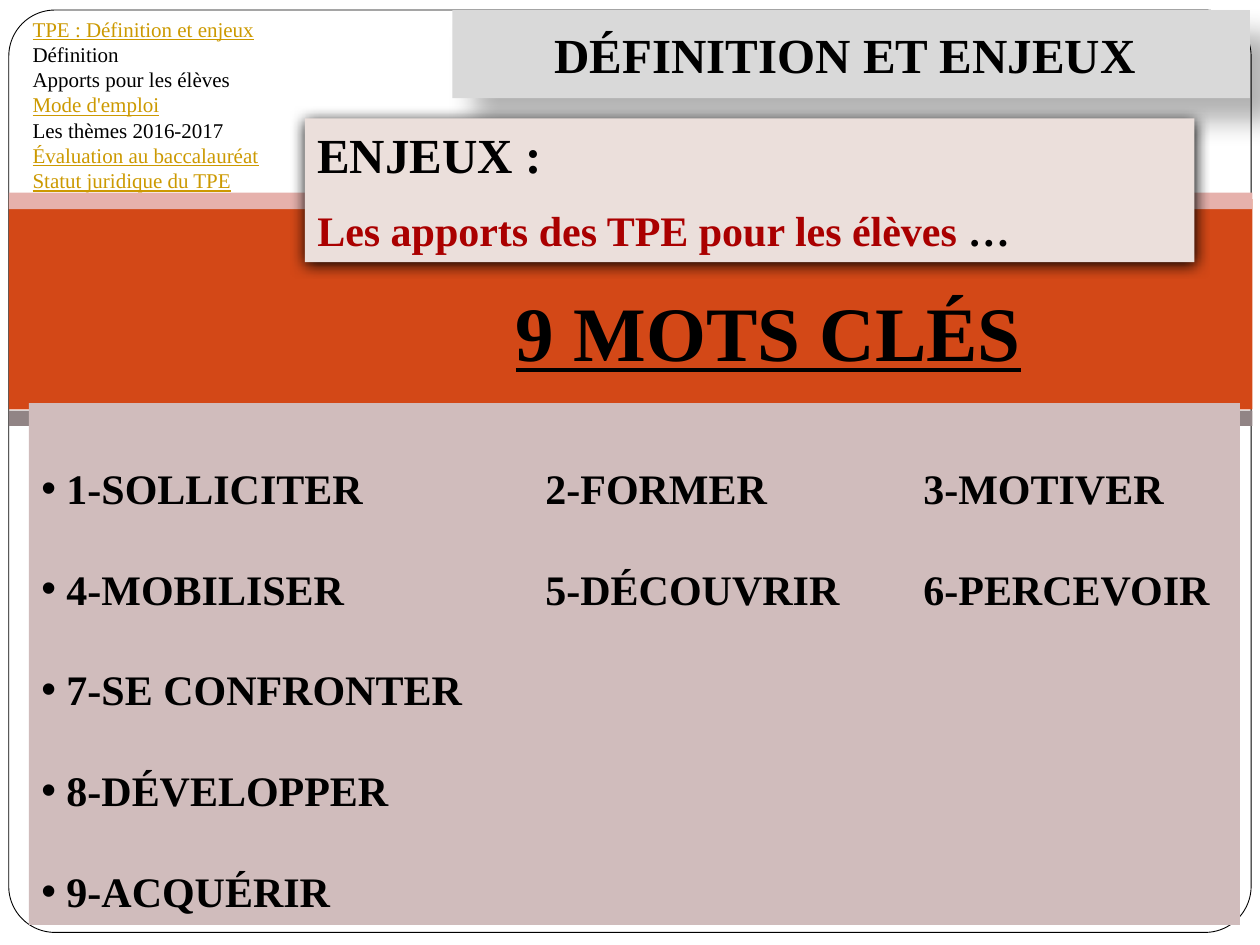
from dataclasses import dataclass

from lxml import etree
from pptx import Presentation
from pptx.dml.color import RGBColor
from pptx.enum.shapes import MSO_SHAPE
from pptx.enum.text import MSO_ANCHOR, PP_ALIGN
from pptx.oxml.ns import qn
from pptx.util import Inches, Pt

RECTANGLE = MSO_SHAPE.RECTANGLE
ROUNDED = MSO_SHAPE.ROUNDED_RECTANGLE
TOP, MIDDLE = MSO_ANCHOR.TOP, MSO_ANCHOR.MIDDLE
LEFT, CENTER = PP_ALIGN.LEFT, PP_ALIGN.CENTER


@dataclass(frozen=True)
class Theme:
    font: str = "Times New Roman"
    black: str = "000000"
    white: str = "FFFFFF"
    orange: str = "D34817"
    pink: str = "E6B1AC"
    taupe: str = "918485"
    title_fill: str = "D9D9D9"
    stakes_fill: str = "EBDFDB"
    keywords_fill: str = "D0BCBC"
    link: str = "CC9900"
    accent: str = "AA0000"
    menu_size: int = 12
    body_size: int = 24
    heading_size: int = 28
    banner_size: int = 44


class SlideBuilder:
    def __init__(self, slide, theme):
        self.slide = slide
        self.theme = theme

    def panel(self, left, top, width, height, fill, kind=RECTANGLE):
        shape = self.slide.shapes.add_shape(
            kind, Inches(left), Inches(top), Inches(width), Inches(height))
        shape.shadow.inherit = False
        shape.fill.solid()
        shape.fill.fore_color.rgb = RGBColor.from_string(fill)
        shape.line.fill.background()
        return shape

    def text_box(self, left, top, width, height):
        return self.slide.shapes.add_textbox(
            Inches(left), Inches(top), Inches(width), Inches(height))

    def cast_shadow(self, shape, opacity, blur, distance, angle):
        """Opacity in percent, blur and distance in points, angle in degrees."""
        effects = shape._element.spPr.find(qn("a:effectLst"))
        shadow = etree.SubElement(
            effects, qn("a:outerShdw"), blurRad=str(Pt(blur)),
            dist=str(Pt(distance)), dir=str(angle * 60000),
            algn="tl", rotWithShape="0")
        color = etree.SubElement(shadow, qn("a:srgbClr"), val=self.theme.black)
        etree.SubElement(color, qn("a:alpha"), val=str(opacity * 1000))

    def fill_text(self, shape, lines, align=LEFT, anchor=TOP):
        """Fill a shape with one paragraph per line, each a list of runs."""
        frame = shape.text_frame
        frame.word_wrap = True
        frame.vertical_anchor = anchor
        for index, runs in enumerate(lines):
            paragraph = frame.add_paragraph() if index else frame.paragraphs[0]
            paragraph.alignment = align
            for run in runs:
                self.add_run(paragraph, *run)
        return frame.paragraphs

    def add_run(self, paragraph, text, size, color, bold=True, underline=False):
        run = paragraph.add_run()
        run.text = text
        font = run.font
        font.name = self.theme.font
        font.size = Pt(size)
        font.bold = bold
        font.underline = underline
        font.color.rgb = RGBColor.from_string(color)

    def bullet(self, paragraph, tab_stops):
        properties = paragraph._p.get_or_add_pPr()
        properties.set("marL", "0")
        properties.set("indent", "0")
        etree.SubElement(properties, qn("a:buFont"), typeface="Arial")
        etree.SubElement(properties, qn("a:buChar"), char="•")
        tabs = etree.SubElement(properties, qn("a:tabLst"))
        for stop in tab_stops:
            etree.SubElement(tabs, qn("a:tab"), pos=str(Inches(stop)), algn="l")


MENU = [
    ("TPE : Définition et enjeux", True),
    ("Définition", False),
    ("Apports pour les élèves", False),
    ("Mode d'emploi", True),
    ("Les thèmes 2016-2017", False),
    ("Évaluation au baccalauréat", True),
    ("Statut juridique du TPE", True),
]
KEYWORD_ROWS = [
    ["1-SOLLICITER", "2-FORMER", "3-MOTIVER"],
    ["4-MOBILISER", "5-DÉCOUVRIR", "6-PERCEVOIR"],
    ["7-SE CONFRONTER"],
    ["8-DÉVELOPPER"],
    ["9-ACQUÉRIR"],
]
KEYWORD_TABS = (4, 7)


def main():
    presentation = Presentation()
    presentation.slide_width = Inches(10)
    presentation.slide_height = Inches(7.5)
    slide = presentation.slides.add_slide(presentation.slide_layouts[6])
    theme = Theme()
    builder = SlideBuilder(slide, theme)

    border = builder.panel(0.07, 0.08, 9.86, 7.32, theme.white, ROUNDED)
    border.adjustments[0] = 0.05
    border.line.color.rgb = RGBColor.from_string(theme.black)
    border.line.width = Pt(0.5)
    for top, height, color in [(1.58, 1.67, theme.orange),
                               (1.53, 0.13, theme.pink),
                               (3.26, 0.12, theme.taupe)]:
        builder.panel(0.07, top, 9.87, height, color)

    title = builder.panel(3.59, 0.08, 6.33, 0.7, theme.title_fill)
    builder.cast_shadow(title, 30, 15, 18, 45)
    builder.fill_text(
        title, [[("DÉFINITION ET ENJEUX ", theme.heading_size, theme.black)]],
        CENTER, MIDDLE)

    stakes = builder.panel(2.42, 0.94, 7.06, 1.14, theme.stakes_fill)
    builder.cast_shadow(stakes, 100, 8.5, 1, 90)
    stakes_heading, _ = builder.fill_text(stakes, [
        [("ENJEUX :", theme.heading_size, theme.black)],
        [("Les apports des TPE pour les élèves ", theme.body_size, theme.accent),
         ("…", theme.body_size, theme.black)],
    ])
    stakes_heading.space_after = Pt(12)

    keywords = builder.panel(0.23, 3.2, 9.61, 4.14, theme.keywords_fill)
    keyword_lines = [[(" " + "\t".join(row), theme.body_size, theme.black)]
                     for row in KEYWORD_ROWS]
    for paragraph in builder.fill_text(keywords, keyword_lines, anchor=MIDDLE):
        paragraph.line_spacing = 2.0
        builder.bullet(paragraph, KEYWORD_TABS)

    menu = builder.text_box(0.16, 0.08, 2.11, 1.51)
    builder.fill_text(menu, [
        [(text, theme.menu_size, theme.link if linked else theme.black,
          False, linked)]
        for text, linked in MENU])

    banner = builder.text_box(2.66, 2.21, 6.88, 0.84)
    builder.fill_text(
        banner,
        [[("9 MOTS CLÉS", theme.banner_size, theme.black, True, True)]], CENTER)

    presentation.save("out.pptx")


if __name__ == "__main__":
    main()
